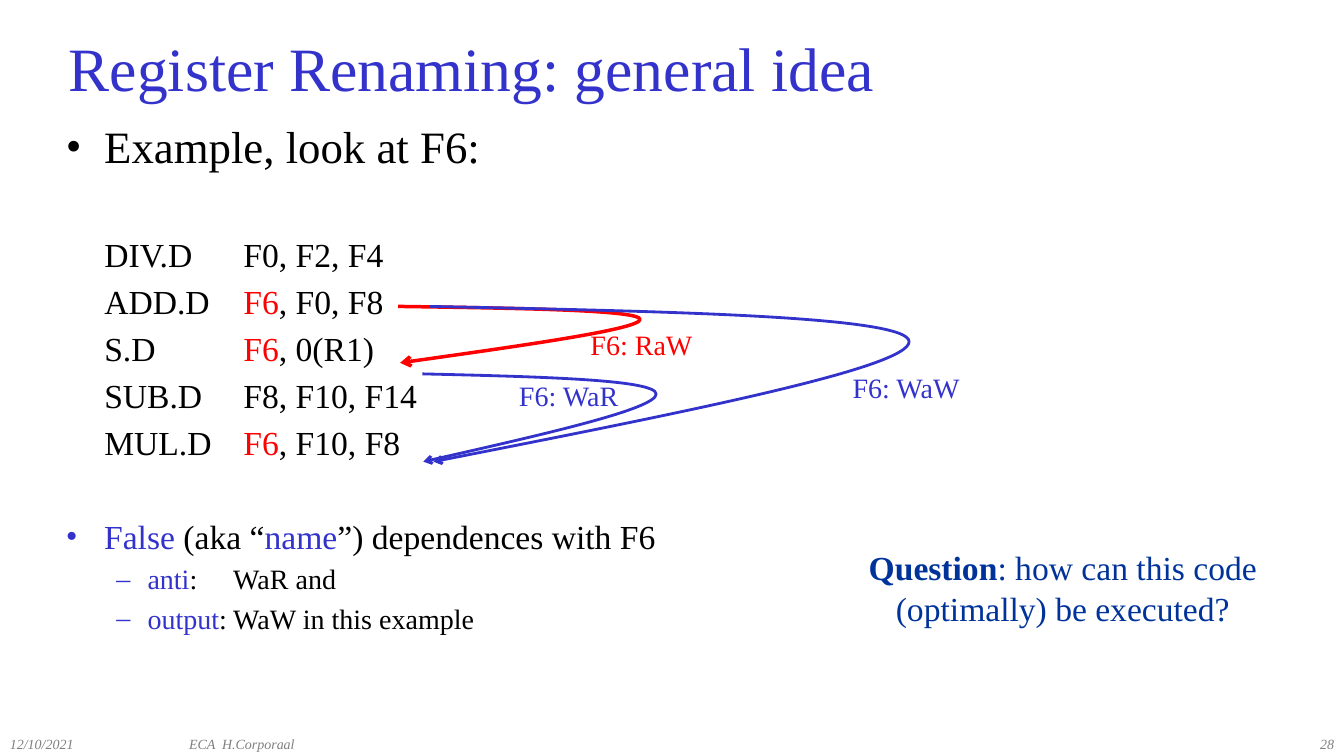
from pptx import Presentation
from pptx.dml.color import RGBColor
from pptx.enum.text import MSO_ANCHOR, PP_ALIGN
from pptx.oxml.ns import qn
from pptx.util import Inches, Pt
from lxml import etree

LEFT, MID, RIGHT = PP_ALIGN.LEFT, PP_ALIGN.CENTER, PP_ALIGN.RIGHT
CENTRE = MSO_ANCHOR.MIDDLE
FACE = "Times New Roman"
BLACK = RGBColor(0, 0, 0)
BLUE = RGBColor(0x33, 0x33, 0xCC)
NAVY = RGBColor(0x00, 0x33, 0x99)
RED = RGBColor(0xFF, 0, 0)
GREY = RGBColor(0x80, 0x80, 0x80)

WIDE, HIGH = Inches(13.333), Inches(7.5)
COLS = 96  # square grid: 96 columns by 54 rows
CELL = WIDE / COLS

CODE = [
    ["DIV.D\tF0, F2, F4"],
    ["ADD.D\t", ("F6", RED), ", F0, F8"],
    ["S.D\t", ("F6", RED), ", 0(R1)"],
    ["SUB.D\tF8, F10, F14"],
    ["MUL.D\t", ("F6", RED), ", F10, F8"],
]
FALSE = [("False", BLUE), " (aka “", ("name", BLUE), "”) dependences with F6"]
KINDS = [
    [("anti", BLUE), ":\tWaR and"],
    [("output", BLUE), ":\tWaW in this example"],
]
# colour, line width, start, turn, end
ARROWS = [
    (RED, 2.5, (28.44, 21.89), (45.72, 22.82), (28.58, 25.92)),
    (BLUE, 2, (30.17, 26.71), (46.87, 28.15), (30.24, 32.98)),
    (BLUE, 2, (30.67, 21.89), (64.94, 24.41), (30.96, 32.98)),
]
LABELS = [
    ("F6: RaW", RED, (41.47, 23.04, 8.78, 3.17)),
    ("F6: WaR", BLUE, (36.36, 26.71, 8.57, 3.17)),
    ("F6: WaW", BLUE, (60.19, 26.14, 9.14, 3.17)),
]
FOOT = [
    ("12/10/2021", LEFT, (0, 52.2, 12.8, 1.8)),
    ("ECA  H.Corporaal", LEFT, (12.8, 52.2, 30.4, 1.8)),
    ("28", RIGHT, (76, 52.2, 20, 1.8)),
]


def grid(*cells):
    return [round(n * CELL) for n in cells]


def add_box(slide, area, wrap=True):
    frame = slide.shapes.add_textbox(*grid(*area)).text_frame
    frame.word_wrap = wrap
    return frame


def style(para, size, color, align=LEFT, gap=0.0):
    """Set font and alignment; gap is the space before, as a share of size."""
    para.alignment = align
    para.space_before = Pt(size * gap)
    font = para.font
    font.name, font.size, font.color.rgb = FACE, Pt(size), color


def fill(para, parts):
    """Add runs; a part is a text or a (text, colour) pair."""
    for part in parts:
        text, color = (part, None) if isinstance(part, str) else part
        run = para.add_run()
        run.text = text
        if color is not None:
            run.font.color.rgb = color


def next_para(frame):
    first = frame.paragraphs[0]
    return frame.add_paragraph() if first.runs else first


def set_list(para, mark, left, hang):
    props = para._p.get_or_add_pPr()
    props.set("marL", str(Inches(left)))
    props.set("indent", str(-Inches(hang)))
    etree.SubElement(props, qn("a:buFont"), typeface=FACE)
    etree.SubElement(props, qn("a:buChar"), char=mark)


def set_tabs(para, *stops):
    tabs = etree.SubElement(para._p.get_or_add_pPr(), qn("a:tabLst"))
    for stop in stops:
        etree.SubElement(tabs, qn("a:tab"), pos=str(Inches(stop)), algn="l")


def add_title(slide, text):
    title = slide.shapes.title
    title.left, title.top, title.width, title.height = grid(4.2, 1.8, 89.6, 6)
    title.text_frame.text = text
    title.text_frame.vertical_anchor = CENTRE
    style(title.text_frame.paragraphs[0], 44, BLUE)


def add_bullet(frame, parts, size):
    para = next_para(frame)
    set_list(para, "•", 0.38, 0.38)
    style(para, size, BLACK, gap=0.2)
    fill(para, parts)
    return para


def add_code(slide):
    frame = add_box(slide, (6.74, 16.34, 30, 17))
    for parts in CODE:
        para = next_para(frame)
        set_tabs(para, 1.38)
        style(para, 24, BLACK, gap=0.2)
        fill(para, parts)


def add_kinds(slide):
    frame = add_box(slide, (4, 36.5, 50, 11))
    add_bullet(frame, FALSE, 24)
    for parts in KINDS:
        para = next_para(frame)
        para.level = 1
        set_list(para, "–", 0.81, 0.31)
        set_tabs(para, 0.85, 1.66)
        style(para, 20, BLACK, gap=0.2)
        fill(para, parts)


def add_line(slide, text, area, size, color, align=LEFT, wrap=True):
    para = add_box(slide, area, wrap).paragraphs[0]
    style(para, size, color, align)
    fill(para, [text])
    return para


def add_ask(slide):
    para = add_box(slide, (60.19, 38.74, 31.46, 6.55)).paragraphs[0]
    style(para, 24, NAVY, MID, gap=0.2)
    fill(para, ["Question", ": how can this code (optimally) be executed?"])
    para.runs[0].font.bold = True


def add_arrow(slide, color, width, start, turn, end):
    """Draw two Bezier arcs that meet at the turn, with a head at the end."""
    def blend(a, b, share):
        return a + (b - a) * share

    (x0, y0), (x1, y1), (x2, y2) = start, turn, end
    points = [
        (blend(x0, x1, 0.5), blend(y0, y1, 0.14)),
        (x1, blend(y0, y1, 0.28)),
        turn,
        (x1, blend(y1, y2, 0.22)),
        (blend(x1, x2, 0.5), blend(y1, y2, 0.61)),
        end,
    ]
    pen = slide.shapes.build_freeform(*grid(*start))
    pen.add_line_segments([grid(*spot) for spot in points], close=False)
    shape = pen.convert_to_shape()
    steps = list(shape._element.iter(qn("a:lnTo")))
    for i in range(0, len(steps), 3):
        curve = etree.SubElement(steps[i].getparent(), qn("a:cubicBezTo"))
        for step in steps[i:i + 3]:
            curve.append(step[0])
            step.getparent().remove(step)
    shape.shadow.inherit = False
    shape.fill.background()
    shape.line.color.rgb = color
    shape.line.width = Pt(width)
    etree.SubElement(shape.line._get_or_add_ln(), qn("a:tailEnd"), type="arrow")


def main():
    deck = Presentation()
    deck.slide_width, deck.slide_height = WIDE, HIGH
    slide = deck.slides.add_slide(deck.slide_layouts[5])
    add_title(slide, "Register Renaming: general idea")
    intro = add_box(slide, (4, 8.57, 89.6, 5))
    add_bullet(intro, ["Example, look at F6:"], 32).line_spacing = 0.9
    add_code(slide)
    add_kinds(slide)
    for text, align, area in FOOT:
        add_line(slide, text, area, 10, GREY, align).font.italic = True
    add_ask(slide)
    for arrow in ARROWS:
        add_arrow(slide, *arrow)
    for text, color, area in LABELS:
        add_line(slide, text, area, 20, color, wrap=False)
    deck.save("out.pptx")


if __name__ == "__main__":
    main()
